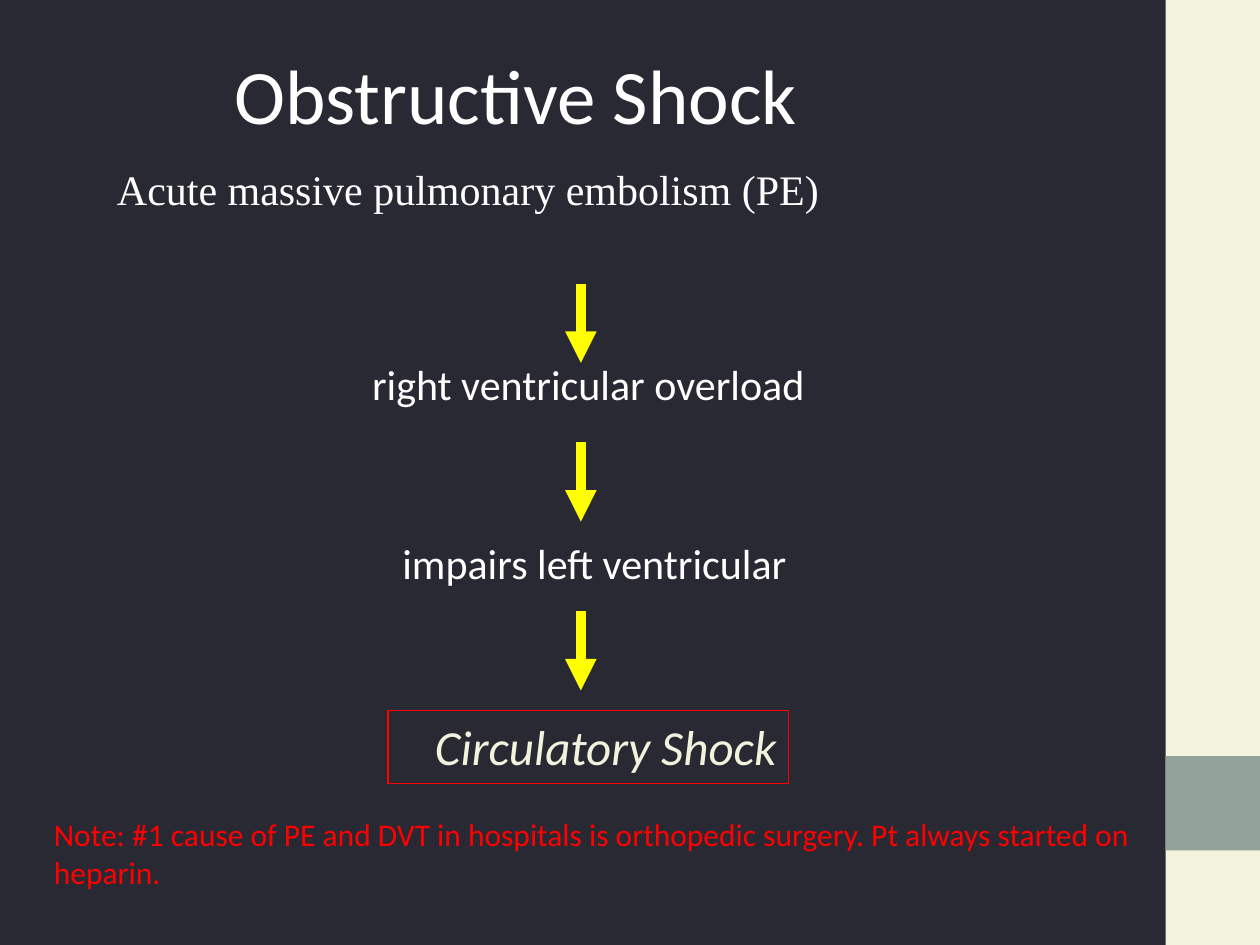
from lxml import etree
from pptx import Presentation
from pptx.dml.color import RGBColor
from pptx.enum.shapes import MSO_CONNECTOR, MSO_SHAPE
from pptx.enum.text import MSO_ANCHOR, MSO_AUTO_SIZE, PP_ALIGN
from pptx.oxml.ns import qn
from pptx.util import Inches, Pt

LEFT, RIGHT = PP_ALIGN.LEFT, PP_ALIGN.RIGHT
TOP, NO_FIT = MSO_ANCHOR.TOP, MSO_AUTO_SIZE.NONE
RECTANGLE, STRAIGHT = MSO_SHAPE.RECTANGLE, MSO_CONNECTOR.STRAIGHT

COLORS = {name: RGBColor.from_string(code) for name, code in {
    "night": "292934", "cream": "F3F2DC", "sage": "93A299",
    "white": "FFFFFF", "red": "FF0000", "yellow": "FFFF00"}.items()}

deck = Presentation()
deck.slide_width, deck.slide_height = Inches(10), Inches(7.5)
page = deck.slides.add_slide(deck.slide_layouts[5])
page.background.fill.solid()
page.background.fill.fore_color.rgb = COLORS["night"]


def write(text, place, size, color="white", font="Calibri", align=RIGHT,
          wrap=False, italic=False, box=None):
    """Put one line of formatted text in the given box, or in a new text box."""
    place = [Inches(length) for length in place]
    if box is None:
        box = page.shapes.add_textbox(*place)
    box.left, box.top, box.width, box.height = place
    frame = box.text_frame
    frame.word_wrap, frame.auto_size = wrap, NO_FIT
    frame.vertical_anchor = TOP
    para = frame.paragraphs[0]
    para.alignment = align
    span = para.add_run()
    span.text = text
    span.font.name, span.font.size = font, Pt(size)
    span.font.italic = italic
    span.font.color.rgb = COLORS[color]
    return box


# Side band with its accent square
band = 0.75
for top, height, color in [(0, 7.5, "cream"), (8 * band, band, "sage")]:
    bar = page.shapes.add_shape(RECTANGLE, Inches(10 - band), Inches(top),
                                Inches(band), Inches(height))
    bar.shadow.inherit = False
    bar.fill.solid()
    bar.fill.fore_color.rgb = COLORS[color]
    bar.line.fill.background()

# Title and starting cause
write("Obstructive Shock", (1.71, 0.33, 4.72, 0.84), 44, box=page.shapes.title)
write("Acute massive pulmonary embolism (PE)", (0.83, 1.25, 8.5, 0.5), 24,
      font="Times New Roman", align=LEFT, wrap=True)

# Steps of the chain
write("right ventricular overload ", (2.56, 2.8, 4, 0.5), 24)
write("impairs left ventricular", (2.85, 4.22, 3.49, 0.5), 24)
outcome = write("Circulatory Shock", (3.08, 5.64, 3.18, 0.58), 28,
                color="cream", italic=True)
outcome.line.color.rgb = COLORS["red"]
outcome.line.width = Pt(0.75)

# Arrows between the steps
arrow_x, arrow_length = Inches(4.61), Inches(0.63)
for top in (2.25, 3.51, 4.85):
    arrow = page.shapes.add_connector(STRAIGHT, arrow_x, Inches(top),
                                      arrow_x, Inches(top) + arrow_length)
    arrow.line.color.rgb = COLORS["yellow"]
    arrow.line.width = Pt(6)
    etree.SubElement(arrow.line._get_or_add_ln(), qn("a:tailEnd"), type="triangle")
    etree.SubElement(arrow._element.spPr, qn("a:effectLst"))

# Closing note
write("Note: #1 cause of PE and DVT in hospitals is orthopedic surgery. "
      "Pt always started on heparin.", (0.33, 6.42, 9, 0.71), 18,
      color="red", align=LEFT, wrap=True)

deck.save("out.pptx")
